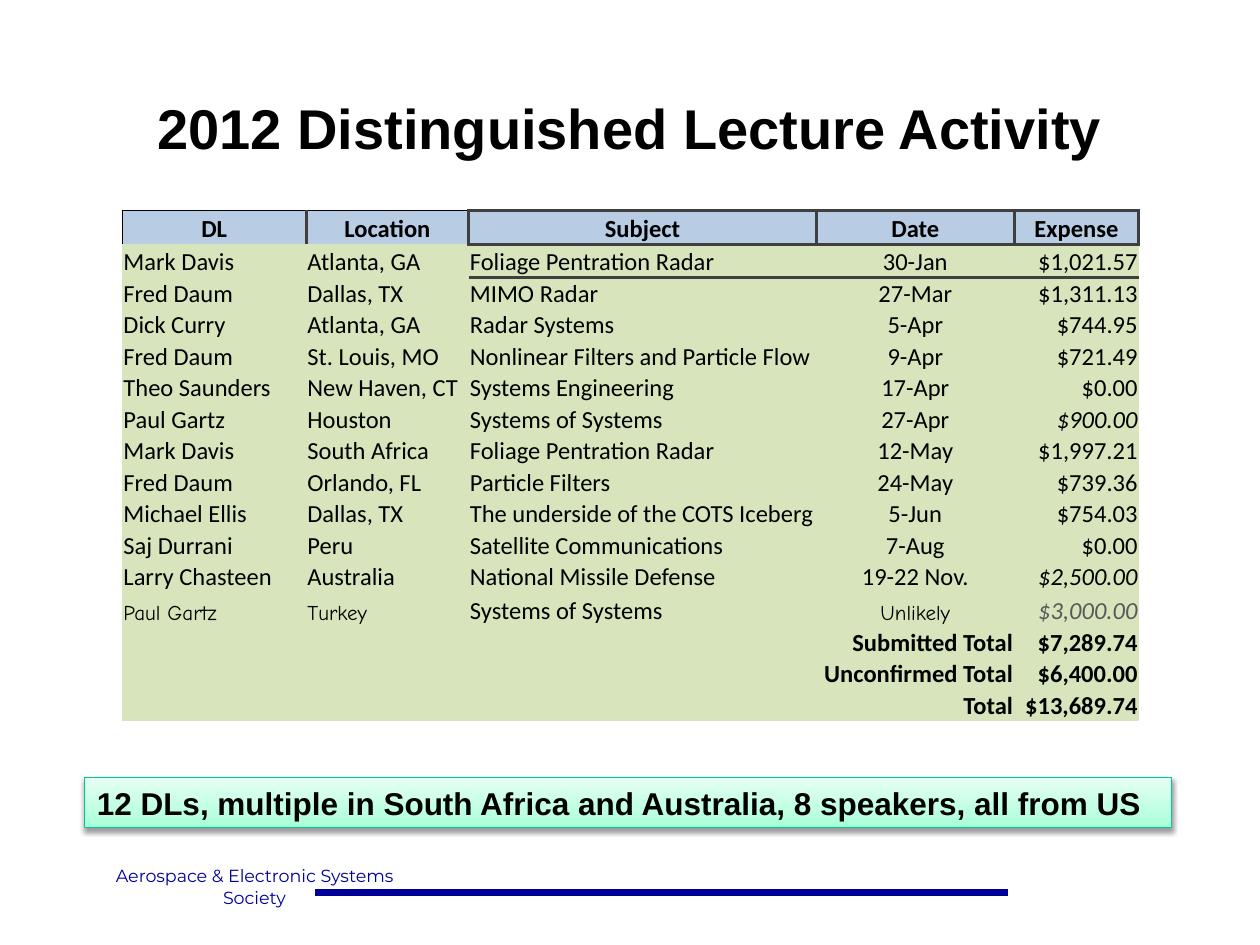
import pptx
import pptx.util
import pptx.dml.color
import pptx.enum.shapes
import pptx.enum.text
import pptx.oxml
import pptx.oxml.ns
from lxml import etree

Inches, Pt = pptx.util.Inches, pptx.util.Pt
RGB = pptx.dml.color.RGBColor.from_string
ALIGN = pptx.enum.text.PP_ALIGN
MIDDLE = pptx.enum.text.MSO_ANCHOR.MIDDLE
BOTTOM = pptx.enum.text.MSO_ANCHOR.BOTTOM
qn = pptx.oxml.ns.qn
NS = pptx.oxml.ns.nsdecls("a")

COLORS = {
    "text": "000000", "faded": "595959", "navy": "000099",
    "header": "B8CCE4", "body": "D8E4BC", "rule": "3F3F3F",
    "banner_edge": "00C896", "banner_low": "A5FFD6",
    "banner_mid": "BFFFE2", "banner_high": "E7FFF3",
}


def add_run(paragraph, text, size, font, color="text", bold=False, italic=False):
    run = paragraph.add_run()
    run.text = text
    run.font.size = Pt(size)
    run.font.name = font
    run.font.bold = bold
    run.font.italic = italic
    run.font.color.rgb = RGB(COLORS[color])


def add_border(cell, side, color, width):
    cell._tc.get_or_add_tcPr().append(pptx.oxml.parse_xml(
        f'<a:ln{side} {NS} w="{Pt(width)}"><a:solidFill>'
        f'<a:srgbClr val="{COLORS[color]}"/></a:solidFill></a:ln{side}>'))


deck = pptx.Presentation()
deck.slide_width, deck.slide_height = Inches(10), Inches(7.5)
slide = deck.slides.add_slide(deck.slide_layouts[5])

# Footer rule and society name
footer_rule = slide.shapes.add_connector(
    pptx.enum.shapes.MSO_CONNECTOR.STRAIGHT,
    Inches(2.5), Inches(7.08), Inches(8), Inches(7.08))
footer_rule.line.color.rgb = RGB(COLORS["navy"])
footer_rule.line.width = Pt(4)
etree.SubElement(footer_rule._element.spPr, qn("a:effectLst"))

society = slide.shapes.add_textbox(
    Inches(0.67), Inches(6.82), Inches(2.7), Inches(0.43)).text_frame
society.word_wrap = True
for i, line in enumerate(["Aerospace & Electronic Systems", "Society"]):
    paragraph = society.add_paragraph() if i else society.paragraphs[0]
    paragraph.alignment = ALIGN.CENTER
    add_run(paragraph, line, 10, "Montserrat", "navy")

# Title
title = slide.shapes.title
title.left, title.top = Inches(0.75), Inches(0.67)
title.width, title.height = Inches(8.5), Inches(0.67)
title.text_frame.vertical_anchor = MIDDLE
title.text_frame.paragraphs[0].alignment = ALIGN.CENTER
add_run(title.text_frame.paragraphs[0], "2012 Distinguished Lecture Activity",
        32, "Arial", bold=True)

# Summary banner with gradient and soft shadow
banner = slide.shapes.add_shape(
    pptx.enum.shapes.MSO_SHAPE.RECTANGLE,
    Inches(0.67), Inches(6.17), Inches(8.63), Inches(0.4))
stops = "".join(
    f'<a:gs pos="{pos * 1000}"><a:srgbClr val="{COLORS[name]}"/></a:gs>'
    for pos, name in [(0, "banner_low"), (35, "banner_mid"), (100, "banner_high")])
banner._element.spPr.append(pptx.oxml.parse_xml(
    f'<a:gradFill {NS} rotWithShape="1"><a:gsLst>{stops}</a:gsLst>'
    '<a:lin ang="16200000" scaled="0"/></a:gradFill>'))
banner.line.color.rgb = RGB(COLORS["banner_edge"])
banner.line.width = Pt(0.75)
banner._element.spPr.append(pptx.oxml.parse_xml(
    f'<a:effectLst {NS}><a:outerShdw blurRad="{Pt(3.1)}" dist="{Pt(1.6)}" '
    f'dir="5400000" rotWithShape="0"><a:srgbClr val="{COLORS["text"]}">'
    '<a:alpha val="38000"/></a:srgbClr></a:outerShdw></a:effectLst>'))
banner.text_frame.word_wrap = True
banner.text_frame.vertical_anchor = MIDDLE
banner.text_frame.paragraphs[0].alignment = ALIGN.LEFT
add_run(banner.text_frame.paragraphs[0],
        "12 DLs, multiple in South Africa and Australia, 8 speakers, all from US",
        18, "Arial", bold=True)

# Lecture table
lectures = [
    ("DL", "Location", "Subject", "Date", "Expense"),
    ("Mark Davis", "Atlanta, GA", "Foliage Pentration Radar", "30-Jan", "$1,021.57"),
    ("Fred Daum", "Dallas, TX", "MIMO Radar", "27-Mar", "$1,311.13"),
    ("Dick Curry", "Atlanta, GA", "Radar Systems", "5-Apr", "$744.95"),
    ("Fred Daum", "St. Louis, MO", "Nonlinear Filters and Particle Flow", "9-Apr", "$721.49"),
    ("Theo Saunders", "New Haven, CT", "Systems Engineering", "17-Apr", "$0.00"),
    ("Paul Gartz", "Houston", "Systems of Systems", "27-Apr", "$900.00"),
    ("Mark Davis", "South Africa", "Foliage Pentration Radar", "12-May", "$1,997.21"),
    ("Fred Daum", "Orlando, FL", "Particle Filters", "24-May", "$739.36"),
    ("Michael Ellis", "Dallas, TX", "The underside of the COTS Iceberg", "5-Jun", "$754.03"),
    ("Saj Durrani", "Peru", "Satellite Communications", "7-Aug", "$0.00"),
    ("Larry Chasteen", "Australia", "National Missile Defense", "19-22 Nov.", "$2,500.00"),
    ("Paul Gartz", "Turkey", "Systems of Systems", "Unlikely", "$3,000.00"),
    ("", "", "", "Submitted Total", "$7,289.74"),
    ("", "", "", "Unconfirmed Total", "$6,400.00"),
    ("", "", "", "Total", "$13,689.74"),
]
UNLIKELY_ROW, FIRST_TOTAL_ROW = 12, 13
unconfirmed = {"$900.00", "$2,500.00", "$3,000.00"}
column_aligns = [ALIGN.LEFT, ALIGN.LEFT, ALIGN.LEFT, ALIGN.CENTER, ALIGN.RIGHT]
row_heights = {0: 0.27, 1: 0.26, UNLIKELY_ROW: 0.27}

activity = slide.shapes.add_table(
    len(lectures), 5, Inches(0.97), Inches(1.67), Inches(8.07), Inches(4.04)).table
activity.first_row = activity.horz_banding = False
# "No Style, No Grid"
activity._tbl.tblPr.find(qn("a:tableStyleId")).text = "{2D5ABB26-0587-4C30-8999-92F81FD0307C}"
for column, width in zip(activity.columns, [1.46, 1.29, 2.76, 1.57, 0.99]):
    column.width = Inches(width)

for r, lecture in enumerate(lectures):
    activity.rows[r].height = Inches(row_heights.get(r, 0.25))
    is_header, is_total = r == 0, r >= FIRST_TOTAL_ROW
    for c, text in enumerate(lecture):
        cell = activity.cell(r, c)
        cell.margin_left = cell.margin_right = cell.margin_top = Inches(0.01)
        cell.margin_bottom = 0
        cell.vertical_anchor = BOTTOM

        # Heavy box around the last three headings, thin edge on the others
        if is_header:
            add_border(cell, "L", *(("rule", 2) if c else ("text", 0.5)))
            add_border(cell, "R", "rule", 2)
            add_border(cell, "T", *(("rule", 2) if c >= 2 else ("text", 0.5)))
            if c >= 2:
                add_border(cell, "B", "rule", 2)
        elif r == 1 and c >= 2:
            add_border(cell, "T", "rule", 2)
        cell.fill.solid()
        cell.fill.fore_color.rgb = RGB(COLORS["header" if is_header else "body"])

        paragraph = cell.text_frame.paragraphs[0]
        if not text:
            etree.SubElement(paragraph._p, qn("a:endParaRPr"), sz="1400")
            continue
        if is_header:
            paragraph.alignment = ALIGN.CENTER
        else:
            paragraph.alignment = ALIGN.RIGHT if is_total else column_aligns[c]
        handwritten = r == UNLIKELY_ROW and c in (0, 1, 3)
        add_run(paragraph, text,
                12 if handwritten else 14,
                "Comic Neue" if handwritten else "Calibri",
                "faded" if r == UNLIKELY_ROW and c == 4 else "text",
                bold=is_header or is_total,
                italic=text in unconfirmed)

deck.save("out.pptx")
